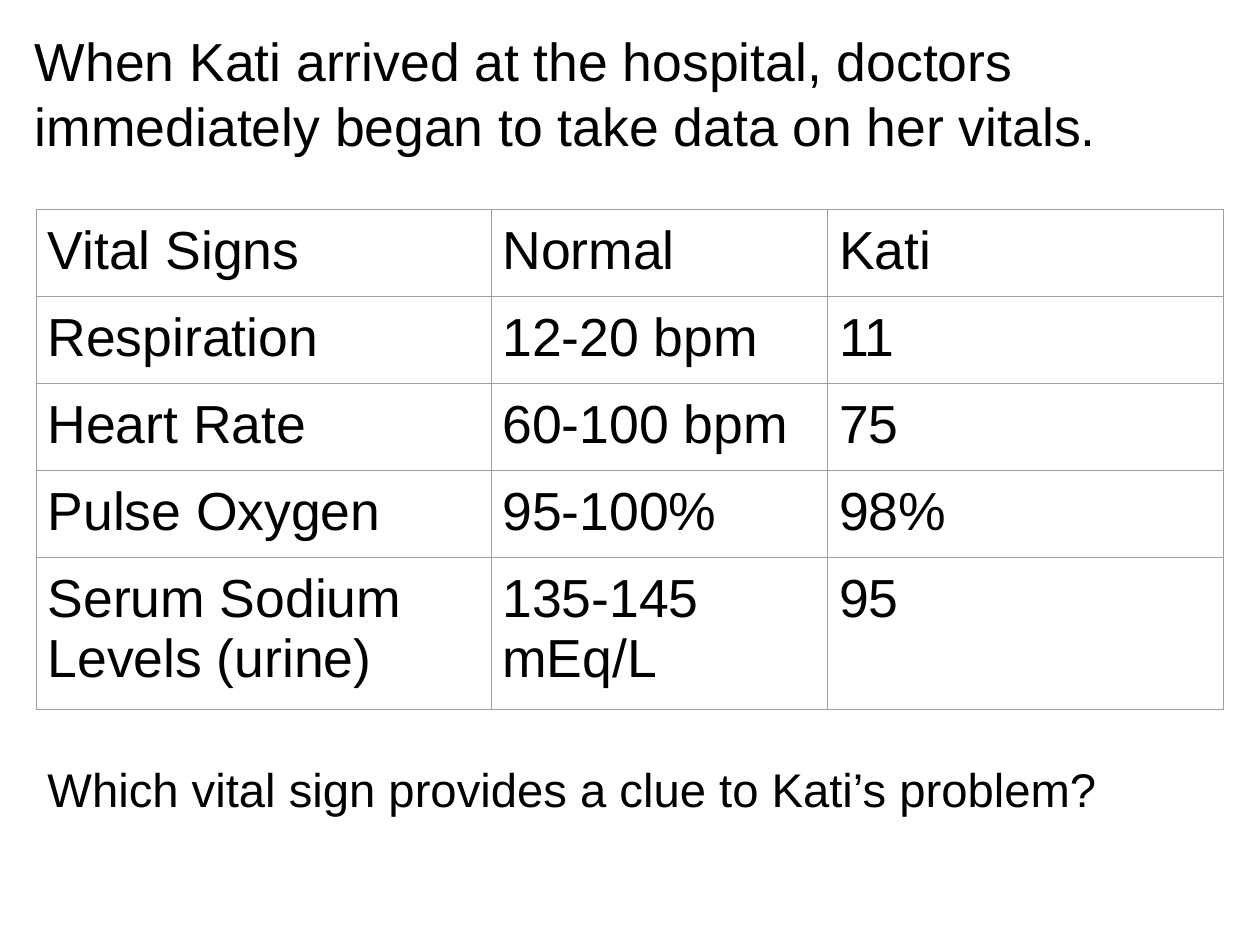
from lxml import etree
from pptx import Presentation
from pptx.dml.color import RGBColor
from pptx.oxml import ns
from pptx.util import Inches, Pt

COLORS = {"ink": "000000", "rule": "9E9E9E"}
PAD = Inches(0.1)
COLS = (4.01, 2.97, 3.49)
ROW = 0.42
VITALS = (
    ("Vital Signs", "Normal", "Kati"),
    ("Respiration", "12-20 bpm", "11"),
    ("Heart Rate", "60-100 bpm", "75"),
    ("Pulse Oxygen", "95-100%", "98%"),
    ("Serum Sodium Levels (urine)", "135-145 mEq/L", "95"),
)


def pad(item):
    """Give a text frame or a table cell equal margins."""
    item.margin_left = item.margin_right = PAD
    item.margin_top = item.margin_bottom = PAD


def write(frame, words, size):
    run = frame.paragraphs[0].add_run()
    run.text = words
    run.font.name = "Arial"
    run.font.size = Pt(size)
    run.font.color.rgb = RGBColor.from_string(COLORS["ink"])


def add_note(slide, box, words, size):
    frame = slide.shapes.add_textbox(*map(Inches, box)).text_frame
    frame.word_wrap = True
    pad(frame)
    write(frame, words, size)


def rule(cell):
    """Draw a thin line on all four sides of a cell."""
    props = cell._tc.get_or_add_tcPr()
    for spot, side in enumerate(("lnL", "lnR", "lnT", "lnB")):
        line = etree.Element(ns.qn("a:" + side), w=str(Pt(0.75)))
        fill = etree.SubElement(line, ns.qn("a:solidFill"))
        etree.SubElement(fill, ns.qn("a:srgbClr"), val=COLORS["rule"])
        props.insert(spot, line)


def add_vitals(slide, left, top):
    box = (left, top, sum(COLS), ROW * len(VITALS))
    table = slide.shapes.add_table(
        len(VITALS), len(COLS), *map(Inches, box)).table
    table.first_row = table.horz_banding = False
    for col, width in zip(table.columns, COLS):
        col.width = Inches(width)
    for row, line in zip(table.rows, VITALS):
        row.height = Inches(ROW)
        for cell, words in zip(row.cells, line):
            cell.fill.background()
            pad(cell)
            rule(cell)
            cell.text_frame.paragraphs[0].line_spacing = 1.0
            write(cell.text_frame, words, 34)


def main():
    deck = Presentation()
    deck.slide_width, deck.slide_height = Inches(11.11), Inches(8.33)
    slide = deck.slides.add_slide(deck.slide_layouts[6])
    add_note(slide, (0.21, 0.15, 10.69, 1.21),
             "When Kati arrived at the hospital, doctors immediately "
             "began to take data on her vitals.", 34)
    add_vitals(slide, 0.32, 1.85)
    add_note(slide, (0.32, 6.6, 9.95, 1.33),
             "Which vital sign provides a clue to Kati’s problem?", 30)
    deck.save("out.pptx")


if __name__ == "__main__":
    main()
